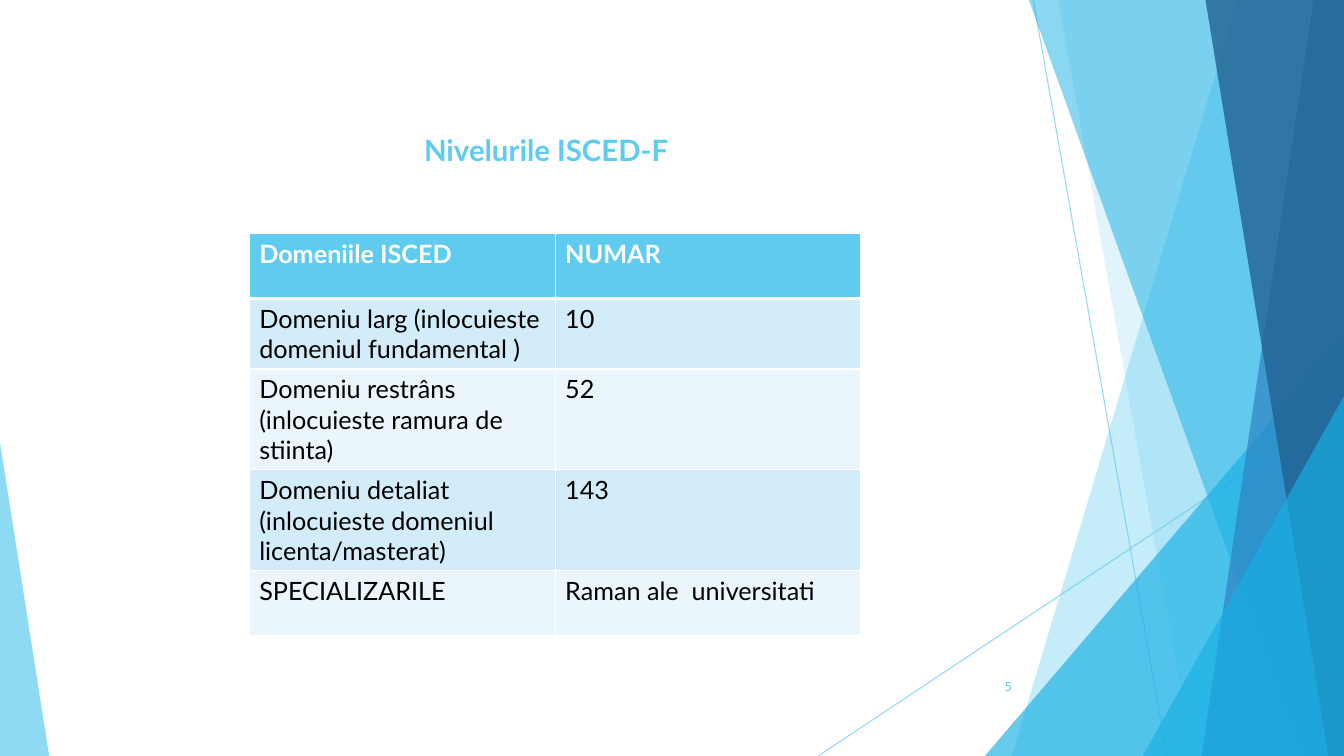
from lxml.etree import SubElement
from pptx import Presentation
from pptx.dml.color import RGBColor
from pptx.enum.shapes import MSO_CONNECTOR, MSO_SHAPE
from pptx.enum.text import MSO_ANCHOR as ANCHOR, PP_ALIGN as ALIGN
from pptx.oxml.ns import qn
from pptx.util import Cm, Pt

WIDTH, HEIGHT = 33.87, 19.05
FONT, SKY, BRIGHT = "Lato", "5FCBEF", "17B0E4"
TITLE, NUMBER = "Nivelurile ISCED-F", "5"
ROWS = [
    ("Domeniile ISCED", "NUMAR"),
    ("Domeniu larg (inlocuieste domeniul fundamental )", "10"),
    ("Domeniu restrâns (inlocuieste ramura de stiinta)", "52"),
    ("Domeniu detaliat (inlocuieste domeniul licenta/masterat)", "143"),
    ("SPECIALIZARILE", "Raman ale  universitati"),
]
BANDS = ["EAF6FC", "D2ECF9"]
COL_WIDTH, ROW_HEIGHT = 7.71, 1.63

# Lengths in cm. Lines: x1, y1, x2, y2
LINES = [(26.04, 0, 29.41, HEIGHT), (WIDTH, 10.24, 20.62, HEIGHT)]
# Facets reach the right edge: x at top, x at bottom
# Triangles stand on the bottom edge: left, top, width, apex position
DECOR = [
    ("facet", (31.19, 25.5), SKY, 36),
    ("facet", (26.67, 30.05), SKY, 20),
    ("triangle", (24.82, 8.46, 9.05, 1), BRIGHT, 66),
    ("facet", (25.93, 32.79), BRIGHT, 50),
    ("facet", (33.1, 30.28), "2E83C3", 70),
    ("facet", (30.38, 33.48), "226292", 80),
    ("triangle", (28.8, 9.98, 5.07, 1), BRIGHT, 66),
    ("triangle", (0, 11.15, 1.24, 0), SKY, 70),
]


def paint(color_format, color):
    color_format.rgb = RGBColor.from_string(color)


def set_opacity(shape, percent):
    for clr in shape._element.iter(qn("a:srgbClr")):
        SubElement(clr, qn("a:alpha"), val=str(percent * 1000))


def write(tf, text, size=18, color="000000", bold=False, align=ALIGN.LEFT):
    p = tf.paragraphs[0]
    p.alignment = align
    r = p.add_run()
    r.text = text
    r.font.name, r.font.size, r.font.bold = FONT, Pt(size), bold
    paint(r.font.color, color)


def add_text(s, box, text, anchor=ANCHOR.TOP, **fmt):
    tf = s.shapes.add_textbox(*map(Cm, box)).text_frame
    tf.word_wrap = True
    tf.vertical_anchor = anchor
    write(tf, text, **fmt)


def add_line(s, ends):
    line = s.shapes.add_connector(MSO_CONNECTOR.STRAIGHT, *map(Cm, ends))
    line.line.width = Pt(0.75)
    paint(line.line.color, SKY)
    set_opacity(line, 70)
    SubElement(line._element.spPr, qn("a:effectLst"))


def add_decor(s, kind, place, color, opacity):
    if kind == "facet":
        top_x, bottom_x = place
        outline = s.shapes.build_freeform(Cm(top_x), 0)
        corners = [(WIDTH, 0), (WIDTH, HEIGHT), (bottom_x, HEIGHT)]
        outline.add_line_segments([(Cm(x), Cm(y)) for x, y in corners])
        sp = outline.convert_to_shape()
    else:
        left, top, width, apex = place
        sp = s.shapes.add_shape(MSO_SHAPE.ISOSCELES_TRIANGLE, Cm(left), Cm(top),
                                Cm(width), Cm(HEIGHT - top))
        sp.adjustments[0] = apex
    sp.shadow.inherit = False
    sp.fill.solid()
    paint(sp.fill.fore_color, color)
    set_opacity(sp, opacity)
    sp.line.fill.background()


def add_borders(cell, **widths):
    """Draw white borders; widths are points by side (L, R, T, B)."""
    tcPr = cell._tc.get_or_add_tcPr()
    for side, width in widths.items():
        ln = SubElement(tcPr, qn(f"a:ln{side}"), w=str(Pt(width)))
        SubElement(SubElement(ln, qn("a:solidFill")), qn("a:srgbClr"), val="FFFFFF")


def add_domain_table(s):
    table = s.shapes.add_table(len(ROWS), 2, Cm(6.28), Cm(5.89),
                               Cm(2 * COL_WIDTH), Cm(ROW_HEIGHT * len(ROWS))).table
    for col in table.columns:
        col.width = Cm(COL_WIDTH)
    for i, texts in enumerate(ROWS):
        table.rows[i].height = Cm(ROW_HEIGHT)
        header = i == 0
        for j, text in enumerate(texts):
            cell = table.cell(i, j)
            add_borders(cell, L=1, R=1, T=3 if i == 1 else 1, B=3 if header else 1)
            cell.fill.solid()
            paint(cell.fill.fore_color, SKY if header else BANDS[i % 2])
            write(cell.text_frame, text, bold=header,
                  color="FFFFFF" if header else "000000")


def main():
    prs = Presentation()
    prs.slide_width, prs.slide_height = Cm(WIDTH), Cm(HEIGHT)
    s = prs.slides.add_slide(prs.slide_layouts[6])
    for ends in LINES:
        add_line(s, ends)
    for item in DECOR:
        add_decor(s, *item)
    add_text(s, (1.93, 3.2, 23.67, 2.11), TITLE, size=21, color=SKY, bold=True,
             align=ALIGN.CENTER)
    add_text(s, (23.85, 16.79, 1.9, 1.02), NUMBER, anchor=ANCHOR.MIDDLE, size=9,
             color=SKY, align=ALIGN.RIGHT)
    add_domain_table(s)
    prs.save("out.pptx")


if __name__ == "__main__":
    main()
